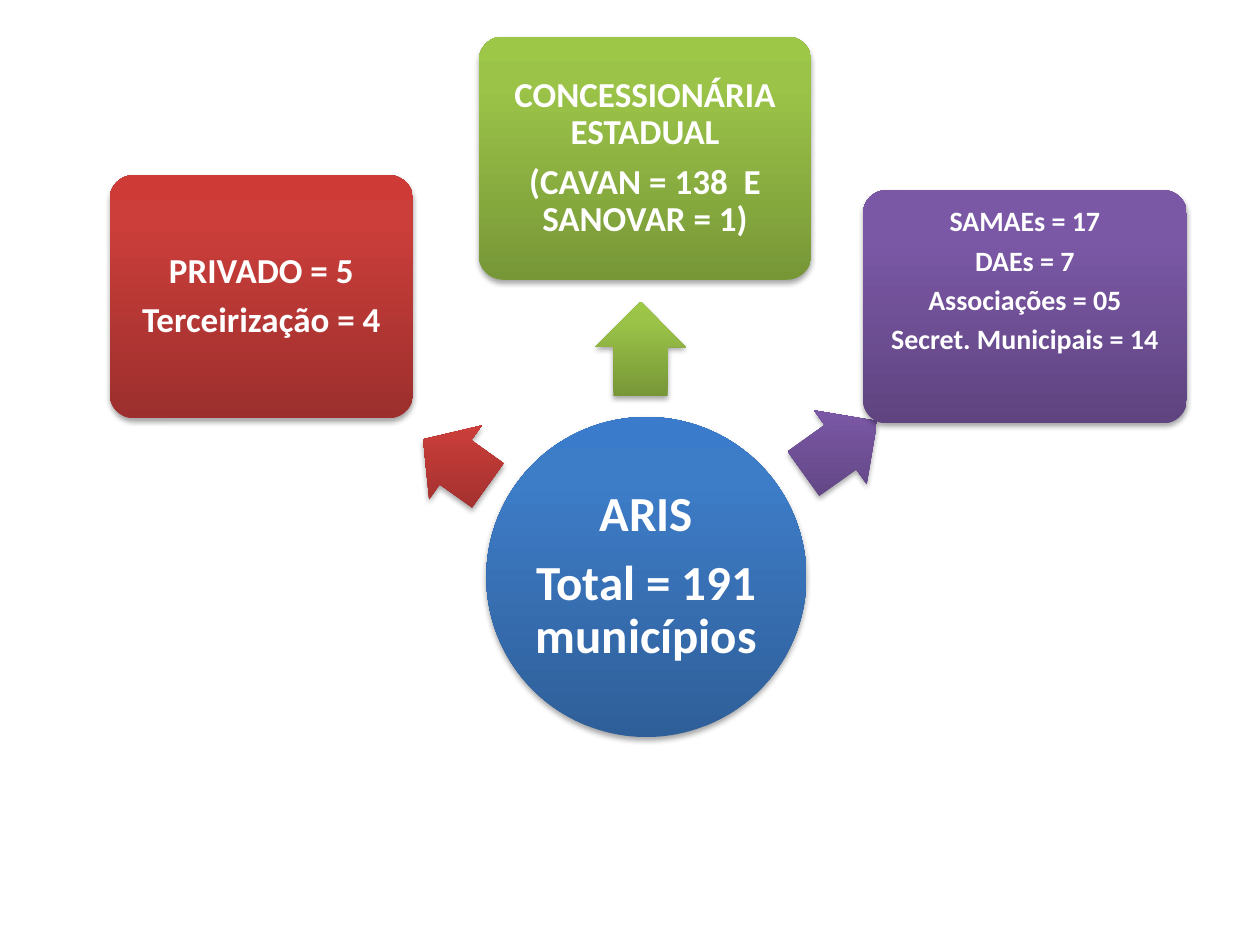
from lxml import etree
from pptx import Presentation
from pptx.dml.color import RGBColor
from pptx.enum import shapes, text
from pptx.oxml import ns, parse_xml
from pptx.util import Pt

WHITE = RGBColor(0xFF, 0xFF, 0xFF)
BLUE = [RGBColor.from_string(c) for c in ("2F5F99", "3D7CC7", "3A7CCB")]
RED = [RGBColor.from_string(c) for c in ("9C2F2D", "CB3E3A", "CE3B37")]
GREEN = [RGBColor.from_string(c) for c in ("779737", "9BC348", "9DC746")]
PURPLE = [RGBColor.from_string(c) for c in ("5F4480", "7B58A6", "7C57A8")]
STOPS = (0, 80, 100)

HUB = {"at": (277.9, 238.3, 182.9, 182.9), "size": 28, "inset": 1.5, "colors": BLUE,
       "lines": ["ARIS", "Total = 191 municípios"]}
PROVIDERS = [
    {"at": (62.6, 100.1, 173.5, 139), "size": 20, "inset": 2.9, "colors": RED,
     "lines": ["PRIVADO = 5", "Terceirização = 4"],
     "arrow": (237.6, 238.3, 45.4, 51.8), "turn": 35.5},
    {"at": (273.6, 20.9, 190.1, 139), "size": 20, "inset": 2.9, "colors": GREEN,
     "lines": ["CONCESSIONÁRIA ESTADUAL", "(CAVAN = 138  E SANOVAR = 1)"],
     "arrow": (339.1, 173.5, 54, 51.8), "turn": 90.2},
    {"at": (493.2, 108.7, 185, 133.2), "size": 16, "inset": 2.2, "colors": PURPLE,
     "lines": ["SAMAEs = 17", "DAEs = 7", "Associações = 05", "Secret. Municipais = 14"],
     "space_below": 28.6,
     "arrow": (454.3, 229.7, 51.8, 51.8), "turn": 144.5},
]


def add_solid(slide, kind, at, colors):
    solid = slide.shapes.add_shape(kind, *map(Pt, at))
    solid.line.fill.background()
    solid.fill.gradient()
    props = solid.element.spPr
    stops = "".join(f'<a:gs pos="{stop * 1000}"><a:srgbClr val="{color}"/></a:gs>'
                    for stop, color in zip(STOPS, colors))
    props.replace(props.find(ns.qn("a:gradFill")), parse_xml(
        f'<a:gradFill {ns.nsdecls("a")} rotWithShape="0"><a:gsLst>{stops}</a:gsLst>'
        '<a:lin ang="16200000" scaled="0"/></a:gradFill>'))
    solid.shadow.inherit = False
    shadow = etree.SubElement(props.find(ns.qn("a:effectLst")), ns.qn("a:outerShdw"),
                              blurRad="40000", dist="23000", dir="5400000", rotWithShape="0")
    black = etree.SubElement(shadow, ns.qn("a:srgbClr"), val="000000")
    etree.SubElement(black, ns.qn("a:alpha"), val="35000")
    return solid


def write_lines(solid, part):
    frame = solid.text_frame
    frame.word_wrap = True
    frame.vertical_anchor = text.MSO_ANCHOR.MIDDLE
    inset = part["inset"]
    frame.margin_left = frame.margin_top = frame.margin_right = Pt(inset)
    frame.margin_bottom = Pt(inset + part.get("space_below", 0))
    frame.text = "\n".join(part["lines"])
    for paragraph in frame.paragraphs:
        paragraph.alignment = text.PP_ALIGN.CENTER
        paragraph.line_spacing = 0.9
        paragraph.space_after = Pt(part["size"] * 0.33)
        for run in paragraph.runs:
            run.font.name = "Calibri"
            run.font.size = Pt(part["size"])
            run.font.bold = True
            run.font.color.rgb = WHITE


def main():
    deck = Presentation()
    deck.slide_width, deck.slide_height = Pt(720), Pt(540)
    slide = deck.slides.add_slide(deck.slide_layouts[6])

    hub = add_solid(slide, shapes.MSO_SHAPE.OVAL, HUB["at"], HUB["colors"])
    write_lines(hub, HUB)
    for provider in PROVIDERS:
        arrow = add_solid(slide, shapes.MSO_SHAPE.LEFT_ARROW, provider["arrow"], provider["colors"])
        arrow.adjustments[0], arrow.adjustments[1] = 0.6, 0.5
        arrow.rotation = provider["turn"]
        box = add_solid(slide, shapes.MSO_SHAPE.ROUNDED_RECTANGLE, provider["at"], provider["colors"])
        box.adjustments[0] = 0.1
        write_lines(box, provider)

    deck.save("out.pptx")


if __name__ == "__main__":
    main()
